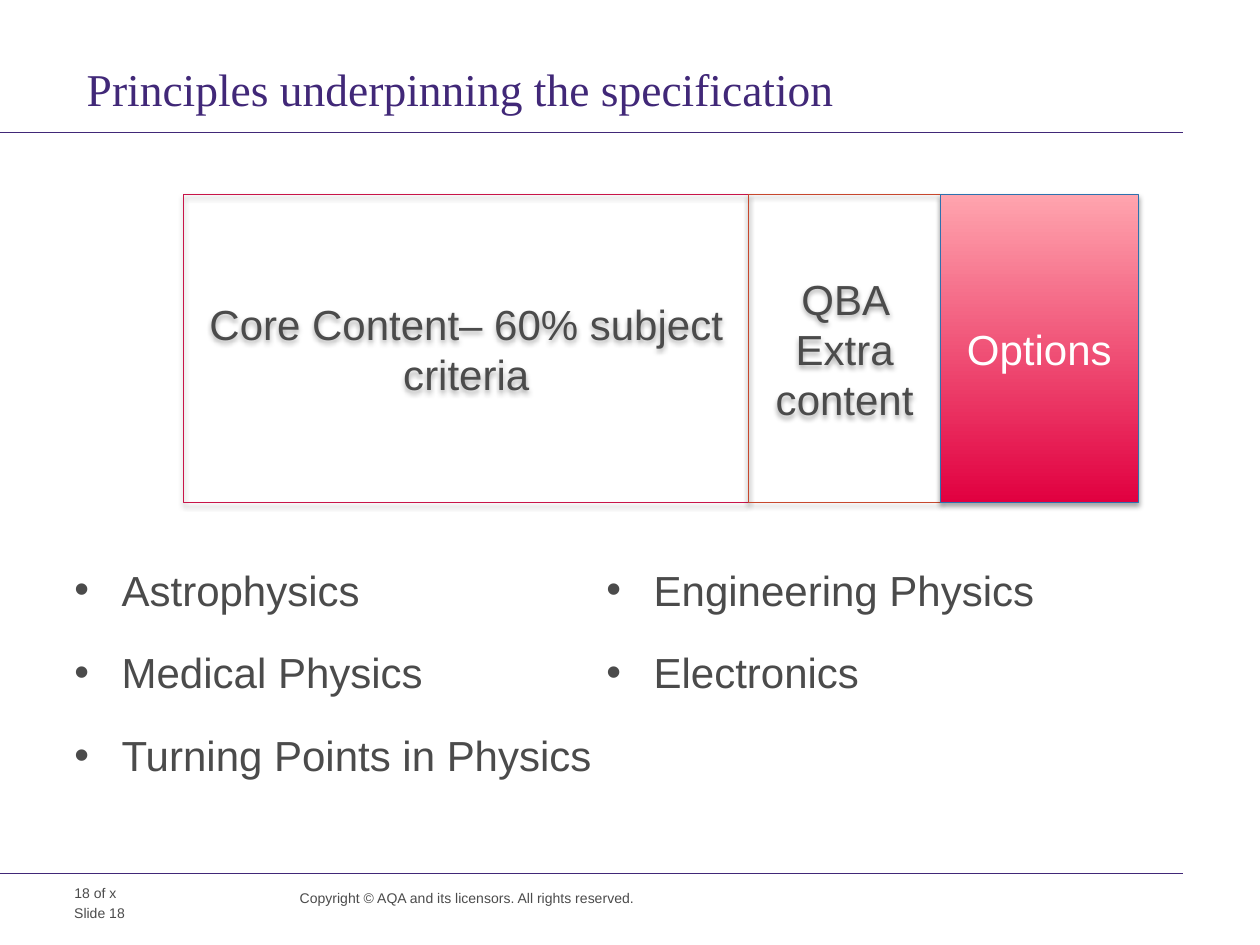
from lxml import etree
from pptx import Presentation
from pptx.dml.color import RGBColor
from pptx.enum.shapes import MSO_CONNECTOR, MSO_SHAPE
from pptx.enum.text import MSO_ANCHOR, PP_ALIGN
from pptx.oxml.ns import qn
from pptx.util import Pt

RECTANGLE = MSO_SHAPE.RECTANGLE
STRAIGHT = MSO_CONNECTOR.STRAIGHT
MIDDLE = MSO_ANCHOR.MIDDLE
CENTER = PP_ALIGN.CENTER

PURPLE = "412878"
GREY = "4B4B4B"
WHITE = "FFFFFF"
RULE_END = 676


def colour(value):
    return RGBColor.from_string(value)


def add_run(paragraph, text, size, hue=GREY, font="Arial"):
    run = paragraph.add_run()
    run.text = text
    run.font.size = Pt(size)
    run.font.name = font
    run.font.color.rgb = colour(hue)


def add_text_box(slide, box, inset=True):
    frame = slide.shapes.add_textbox(*map(Pt, box)).text_frame
    frame.word_wrap = True
    if not inset:
        frame.margin_left = frame.margin_right = 0
        frame.margin_top = frame.margin_bottom = 0
    return frame


def add_rule(slide, top):
    rule = slide.shapes.add_connector(STRAIGHT, 0, Pt(top), Pt(RULE_END), Pt(top))
    rule.line.color.rgb = colour(PURPLE)
    rule.line.width = Pt(0.6)
    etree.SubElement(rule._element.spPr, qn("a:effectLst"))


def add_soft_shadow(shape):
    shape.shadow.inherit = False
    effects = shape._element.spPr.find(qn("a:effectLst"))
    shadow = etree.SubElement(
        effects, qn("a:outerShdw"), blurRad=str(Pt(3.1)), dist=str(Pt(1.8)),
        dir="5400000", rotWithShape="0")
    black = etree.SubElement(shadow, qn("a:srgbClr"), val="000000")
    etree.SubElement(black, qn("a:alpha"), val="35000")


def add_title(slide, box, text):
    paragraph = add_text_box(slide, box).paragraphs[0]
    paragraph.line_spacing = Pt(28)
    add_run(paragraph, text, 26, PURPLE, "Times New Roman")


def add_content_bar(slide, box, parts):
    """Blocks side by side; each part is label, width, outline, text colour, gradient."""
    left, top, _, height = box
    for label, width, outline, text_hue, gradient in parts:
        block = slide.shapes.add_shape(
            RECTANGLE, Pt(left), Pt(top), Pt(width), Pt(height))
        if gradient:
            block.fill.gradient()
            block.fill.gradient_angle = 90
            for stop, hue in zip(block.fill.gradient_stops, gradient):
                stop.color.rgb = colour(hue)
        else:
            block.fill.background()
        block.line.color.rgb = colour(outline)
        block.line.width = Pt(0.75)
        add_soft_shadow(block)
        frame = block.text_frame
        frame.word_wrap = True
        frame.vertical_anchor = MIDDLE
        frame.paragraphs[0].alignment = CENTER
        add_run(frame.paragraphs[0], label, 24, text_hue)
        left += width


def add_options(slide, box, options):
    """Bulleted list flowing over two columns."""
    frame = add_text_box(slide, box, inset=False)
    frame._txBody.bodyPr.set("numCol", "2")
    for index, option in enumerate(options):
        paragraph = frame.add_paragraph() if index else frame.paragraphs[0]
        properties = paragraph._p.get_or_add_pPr()
        properties.set("marL", str(Pt(27)))
        properties.set("indent", str(Pt(-27)))
        etree.SubElement(properties, qn("a:buFont"), typeface="Arial")
        etree.SubElement(properties, qn("a:buChar"), char="•")
        paragraph.line_spacing = 1.5
        paragraph.space_after = Pt(4)
        add_run(paragraph, option, 24)


def add_footer(slide, box):
    left, top, _, _ = box
    add_rule(slide, top)
    page = add_text_box(slide, (left, top + 6.5, 113, 9.5), inset=False)
    add_run(page.paragraphs[0], "18 of x", 8)
    number = add_text_box(slide, (left - 7.2, top + 14.3, 112.5, 27))
    add_run(number.paragraphs[0], "Slide 18", 8)
    rights = add_text_box(slide, (left + 121.7, top + 5.7, 211, 18.5))
    add_run(rights.paragraphs[0],
            "Copyright © AQA and its licensors. All rights reserved.", 8)


def main():
    deck = Presentation()
    deck.slide_width, deck.slide_height = Pt(720), Pt(540)
    slide = deck.slides.add_slide(deck.slide_layouts[6])

    # Heading
    add_title(slide, (42.5, 34.5, 633.5, 34),
              "Principles underpinning the specification")
    add_rule(slide, 75.6)

    # Make-up of the specification
    add_content_bar(slide, (104.9, 111.3, 545.6, 175.9), [
        ("Core Content– 60% subject criteria", 323, "C81448", GREY, None),
        ("QBA Extra content", 109.5, "C7472D", GREY, None),
        ("Options", 113.1, "2E71AE", WHITE, ("E10040", "FFA4AE")),
    ])

    # Optional topics
    add_options(slide, (42.5, 308, 608, 174.5), [
        "Astrophysics", "Medical Physics", "Turning Points in Physics",
        "Engineering Physics", "Electronics"])

    # Footer
    add_footer(slide, (42.5, 499, 633.5, 41))

    deck.save("out.pptx")


if __name__ == "__main__":
    main()
